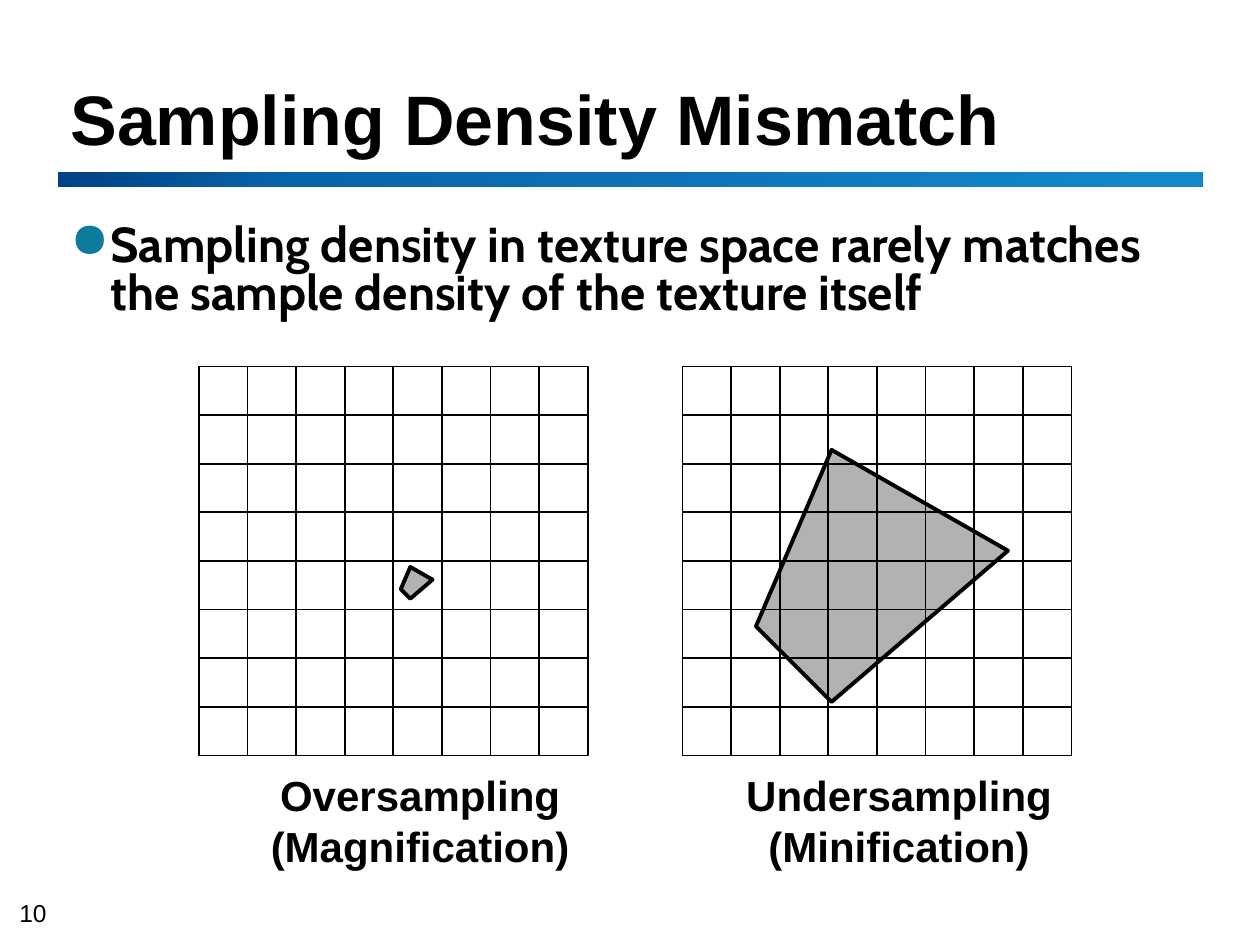
from lxml.etree import SubElement
from pptx import Presentation
from pptx.dml.color import RGBColor as RGB
from pptx.enum.shapes import MSO_SHAPE as Shape
from pptx.enum.text import MSO_ANCHOR as Anchor, PP_ALIGN as Align
from pptx.oxml import parse_xml
from pptx.oxml.ns import nsdecls, qn
from pptx.util import Cm, Pt

THEME = {
    "ink": "000000",
    "quad": "B2B2B2",
    "bullet": "0C7B9C",
    "bar": [(0, "004187"), (21, "0A64A8"), (96, "1487C8")],
    "head_font": "Arial",
    "body_font": "Cabin",
    "title_size": 40,
    "body_size": 28,
    "caption_size": 24,
    "number_size": 14,
    "cell_line": 1,
    "quad_line": 2.25,
}

TITLE = "Sampling Density Mismatch"
BODY = "Sampling density in texture space rarely matches the sample density of the texture itself"
PAGE_NUMBER = "10"

GRID_TOP, CELL, CELLS = 7.39, 0.98, 8
CAPTION_TOP, CAPTION_HEIGHT = 15.39, 2.31
# Corners of the sampled area, as fractions of its size
QUAD = [(0.3, 0), (1, 0.4), (0.3, 1), (0, 0.7)]

# Lengths in centimetres
OVERSAMPLING = {
    "caption": ["Oversampling", "(Magnification)"],
    "caption_left": 5.18, "caption_width": 6.58,
    "grid_left": 4.01, "quad": (8.08, 11.43, 0.64),
}
UNDERSAMPLING = {
    "caption": ["Undersampling", "(Minification)"],
    "caption_left": 14.76, "caption_width": 6.73,
    "grid_left": 13.76, "quad": (15.24, 9.07, 5.08),
}


def add_text(slide, box, lines, size, font=THEME["head_font"], bold=True,
             align=Align.LEFT, anchor=Anchor.TOP, wrap=True):
    """Add a text box with one paragraph per line and return its text frame."""
    frame = slide.shapes.add_textbox(*map(Cm, box)).text_frame
    frame.word_wrap = wrap
    frame.vertical_anchor = anchor
    frame.text = "\n".join(lines)
    for paragraph in frame.paragraphs:
        paragraph.alignment = align
        for run in paragraph.runs:
            run.font.name = font
            run.font.size = Pt(size)
            run.font.bold = bold
            run.font.color.rgb = RGB.from_string(THEME["ink"])
    return frame


def add_bullet(paragraph, indent):
    properties = paragraph._p.get_or_add_pPr()
    properties.set("marL", str(indent))
    properties.set("indent", str(-indent))
    color = SubElement(properties, qn("a:buClr"))
    SubElement(color, qn("a:srgbClr")).set("val", THEME["bullet"])
    SubElement(properties, qn("a:buChar")).set("char", "●")


def set_outline(shape, width):
    shape.shadow.inherit = False
    shape.line.color.rgb = RGB.from_string(THEME["ink"])
    shape.line.width = Pt(width)


def add_bar(slide):
    bar = slide.shapes.add_shape(Shape.RECTANGLE, Cm(1.17), Cm(3.47), Cm(23.07), Cm(0.29))
    bar.shadow.inherit = False
    bar.line.fill.background()
    stops = "".join(
        f'<a:gs pos="{position * 1000}"><a:srgbClr val="{color}"/></a:gs>'
        for position, color in THEME["bar"])
    gradient = parse_xml(
        f'<a:gradFill {nsdecls("a")} rotWithShape="1"><a:gsLst>{stops}</a:gsLst>'
        '<a:lin ang="2700000" scaled="1"/></a:gradFill>')
    bar._element.spPr.find(qn("a:prstGeom")).addnext(gradient)


def add_grid(slide, left):
    group = slide.shapes.add_group_shape()
    for index in range(CELLS * CELLS):
        row, column = divmod(index, CELLS)
        cell = group.shapes.add_shape(
            Shape.RECTANGLE, Cm(left + column * CELL), Cm(GRID_TOP + row * CELL),
            Cm(CELL), Cm(CELL))
        cell.fill.background()
        set_outline(cell, THEME["cell_line"])


def add_quad(slide, left, top, size):
    corners = [(Cm(left + x * size), Cm(top + y * size)) for x, y in QUAD]
    builder = slide.shapes.build_freeform(*corners[0])
    builder.add_line_segments(corners[1:], close=True)
    quad = builder.convert_to_shape()
    quad.fill.solid()
    quad.fill.fore_color.rgb = RGB.from_string(THEME["quad"])
    set_outline(quad, THEME["quad_line"])


def main():
    presentation = Presentation()
    presentation.slide_width, presentation.slide_height = Cm(25.4), Cm(19.05)
    slide = presentation.slides.add_slide(presentation.slide_layouts[6])

    number = add_text(slide, (0.39, 18.11, 0.74, 0.58), [PAGE_NUMBER],
                      THEME["number_size"], bold=False, anchor=Anchor.BOTTOM)
    number.margin_left = number.margin_right = 0
    number.margin_top = number.margin_bottom = 0
    add_bar(slide)

    # The large area lies under its grid, the small one over it
    add_quad(slide, *UNDERSAMPLING["quad"])

    title = add_text(slide, (1.17, 0.84, 23.01, 2.51), [TITLE],
                     THEME["title_size"], anchor=Anchor.BOTTOM)
    title.paragraphs[0].line_spacing = Pt(36)

    body = add_text(slide, (1.17, 4.42, 23.11, 14.07), [BODY],
                    THEME["body_size"], font=THEME["body_font"])
    paragraph = body.paragraphs[0]
    paragraph.line_spacing = Pt(27)
    paragraph.space_after = Pt(4)
    add_bullet(paragraph, Cm(0.81))

    for case in (OVERSAMPLING, UNDERSAMPLING):
        box = (case["caption_left"], CAPTION_TOP, case["caption_width"], CAPTION_HEIGHT)
        add_text(slide, box, case["caption"], THEME["caption_size"],
                 align=Align.CENTER, wrap=False)
        add_grid(slide, case["grid_left"])
    add_quad(slide, *OVERSAMPLING["quad"])

    presentation.save("out.pptx")


if __name__ == "__main__":
    main()
